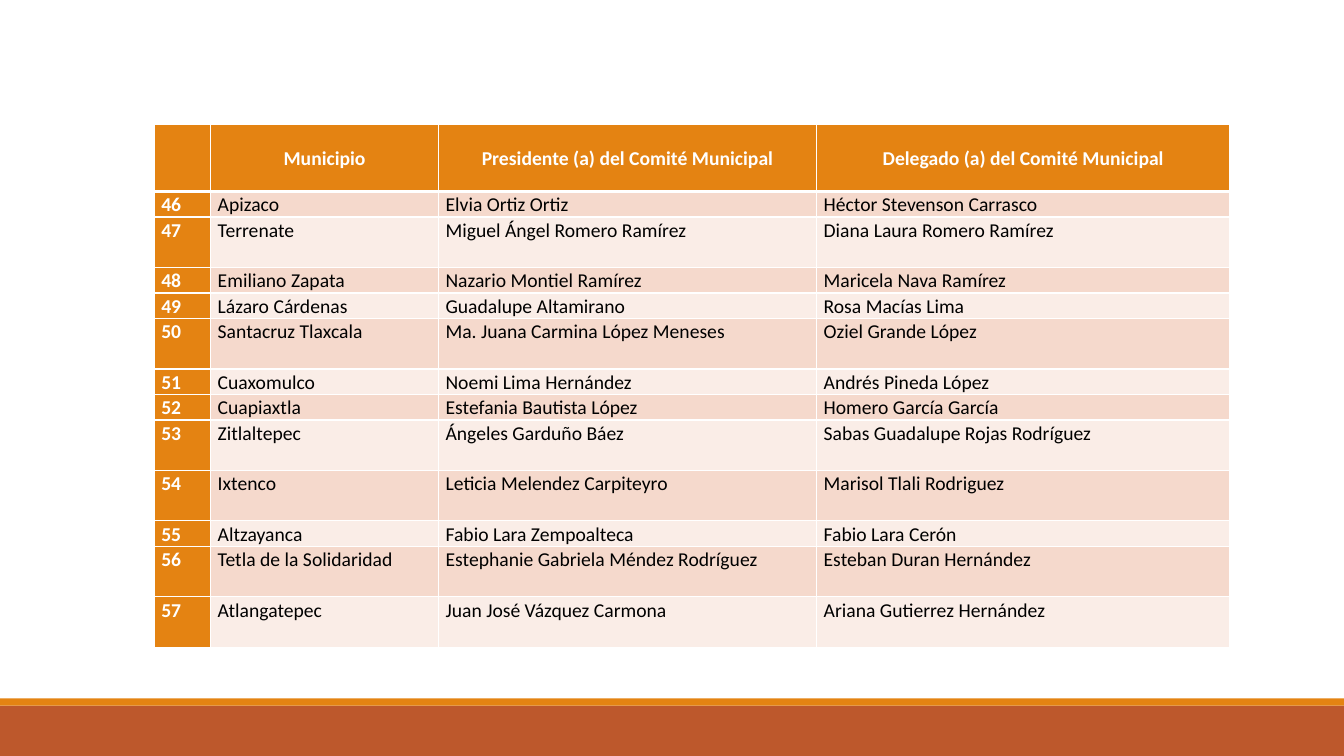
from lxml.etree import SubElement
from pptx import Presentation
from pptx.dml.color import RGBColor
from pptx.enum.shapes import MSO_SHAPE
from pptx.enum.text import MSO_ANCHOR, PP_ALIGN
from pptx.oxml.ns import qn
from pptx.util import Inches, Pt

ORANGE, RUST, WHITE, BLACK = "E48312", "BD582C", "FFFFFF", "000000"
BANDS = ["F5D9CC", "FAEDE7"]
COLUMN_WIDTHS = [0.56, 2.26, 3.75, 4.1]
HEADER_HEIGHT, LINE_HEIGHT = 0.67, 0.25
FIRST_NUMBER = 46
HEADINGS = ["", "Municipio", "Presidente (a) del Comité Municipal",
            "Delegado (a) del Comité Municipal"]
# Municipality, president, delegate, height in lines
COMMITTEES = [
    ("Apizaco", "Elvia Ortiz Ortiz", "Héctor Stevenson Carrasco", 1),
    ("Terrenate", "Miguel Ángel Romero Ramírez", "Diana Laura Romero Ramírez", 2),
    ("Emiliano Zapata", "Nazario Montiel Ramírez", "Maricela Nava Ramírez", 1),
    ("Lázaro Cárdenas", "Guadalupe Altamirano", "Rosa Macías Lima", 1),
    ("Santacruz Tlaxcala", "Ma. Juana Carmina López Meneses", "Oziel Grande López", 2),
    ("Cuaxomulco", "Noemi Lima Hernández", "Andrés Pineda López", 1),
    ("Cuapiaxtla", "Estefania Bautista López", "Homero García García", 1),
    ("Zitlaltepec", "Ángeles Garduño Báez", "Sabas Guadalupe Rojas Rodríguez", 2),
    ("Ixtenco", "Leticia Melendez Carpiteyro", "Marisol Tlali Rodriguez", 2),
    ("Altzayanca", "Fabio Lara Zempoalteca", "Fabio Lara Cerón", 1),
    ("Tetla de la Solidaridad", "Estephanie Gabriela Méndez Rodríguez",
     "Esteban Duran Hernández", 2),
    ("Atlangatepec", "Juan José Vázquez Carmona", "Ariana Gutierrez Hernández", 2),
]


def paint(fill, color):
    fill.solid()
    fill.fore_color.rgb = RGBColor.from_string(color)


def add_bar(slide, top, height, color):
    bar = slide.shapes.add_shape(MSO_SHAPE.RECTANGLE, 0, Inches(top),
                                 Inches(13.33), Inches(height))
    bar.shadow.inherit = False
    paint(bar.fill, color)
    bar.line.fill.background()


def add_borders(cell, top=1, bottom=1):
    """Draw white cell borders; widths are in points."""
    properties = cell._tc.get_or_add_tcPr()
    for side, width in (("L", 1), ("R", 1), ("T", top), ("B", bottom)):
        border = SubElement(properties, qn(f"a:ln{side}"), w=str(Pt(width)))
        solid = SubElement(border, qn("a:solidFill"))
        SubElement(solid, qn("a:srgbClr"), val=WHITE)


def fill_cell(cell, text, background, color, bold, align):
    paint(cell.fill, background)
    cell.margin_left = cell.margin_right = Inches(0.07)
    cell.margin_top = cell.margin_bottom = 0
    paragraph = cell.text_frame.paragraphs[0]
    paragraph.alignment = align
    paragraph.line_spacing = 1.07
    if not text:
        return
    run = paragraph.add_run()
    run.text = text
    run.font.name = "Calibri"
    run.font.size = Pt(14)
    run.font.bold = bold
    run.font.color.rgb = RGBColor.from_string(color)


def add_committee_table(slide):
    heights = [HEADER_HEIGHT] + [LINE_HEIGHT * lines for *_, lines in COMMITTEES]
    table = slide.shapes.add_table(
        len(heights), len(COLUMN_WIDTHS), Inches(1.53), Inches(1.23),
        Inches(sum(COLUMN_WIDTHS)), Inches(sum(heights))).table
    for column, width in zip(table.columns, COLUMN_WIDTHS):
        column.width = Inches(width)
    for row, height in zip(table.rows, heights):
        row.height = Inches(height)

    for cell, heading in zip(table.rows[0].cells, HEADINGS):
        add_borders(cell, bottom=3)
        fill_cell(cell, heading, ORANGE, WHITE, True, PP_ALIGN.CENTER)
        cell.vertical_anchor = MSO_ANCHOR.MIDDLE

    for index, (*names, _) in enumerate(COMMITTEES):
        number, *name_cells = table.rows[index + 1].cells
        for cell in (number, *name_cells):
            add_borders(cell, top=1 if index else 3)
        fill_cell(number, str(FIRST_NUMBER + index), ORANGE, WHITE, True, PP_ALIGN.LEFT)
        for cell, name in zip(name_cells, names):
            fill_cell(cell, name, BANDS[index % 2], BLACK, False, PP_ALIGN.JUSTIFY)


def main():
    deck = Presentation()
    deck.slide_width, deck.slide_height = Inches(13.33), Inches(7.5)
    slide = deck.slides.add_slide(deck.slide_layouts[6])
    paint(slide.background.fill, WHITE)
    add_bar(slide, 7, 0.5, RUST)
    add_bar(slide, 6.93, 0.07, ORANGE)
    add_committee_table(slide)
    deck.save("out.pptx")


if __name__ == "__main__":
    main()
